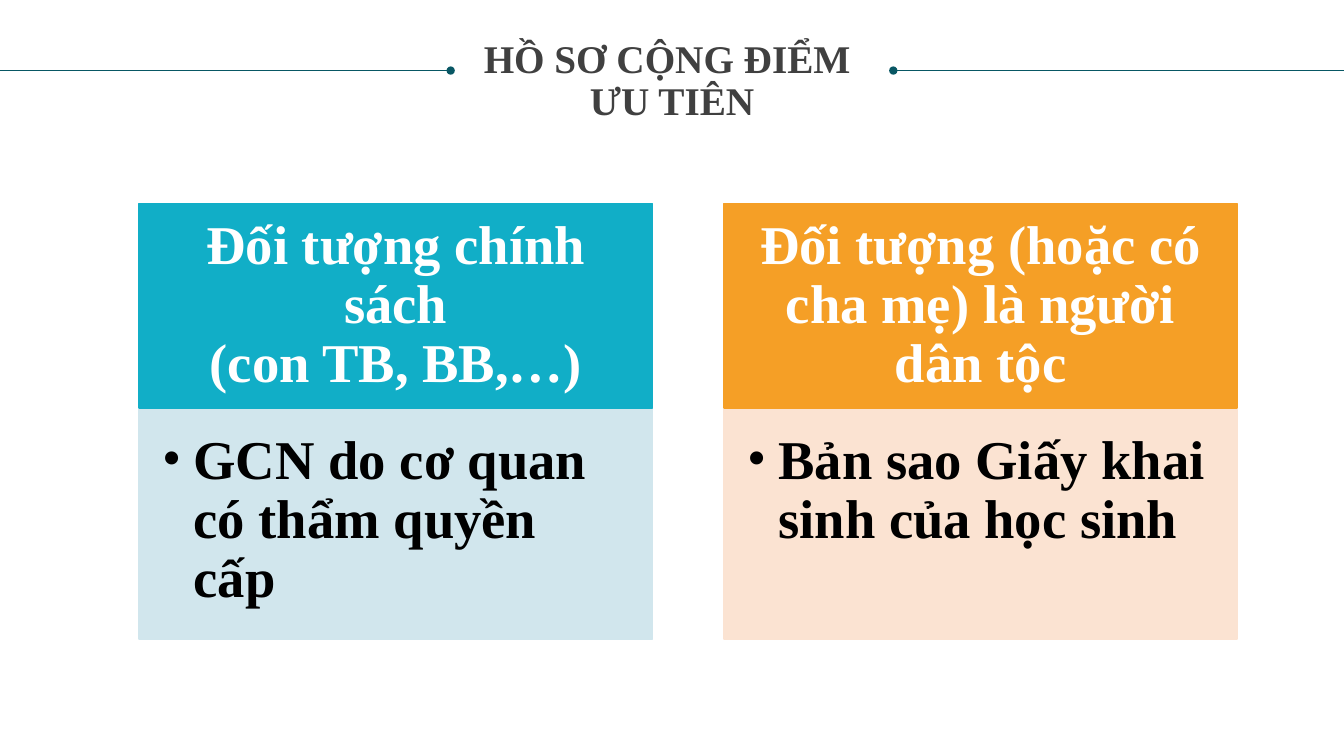
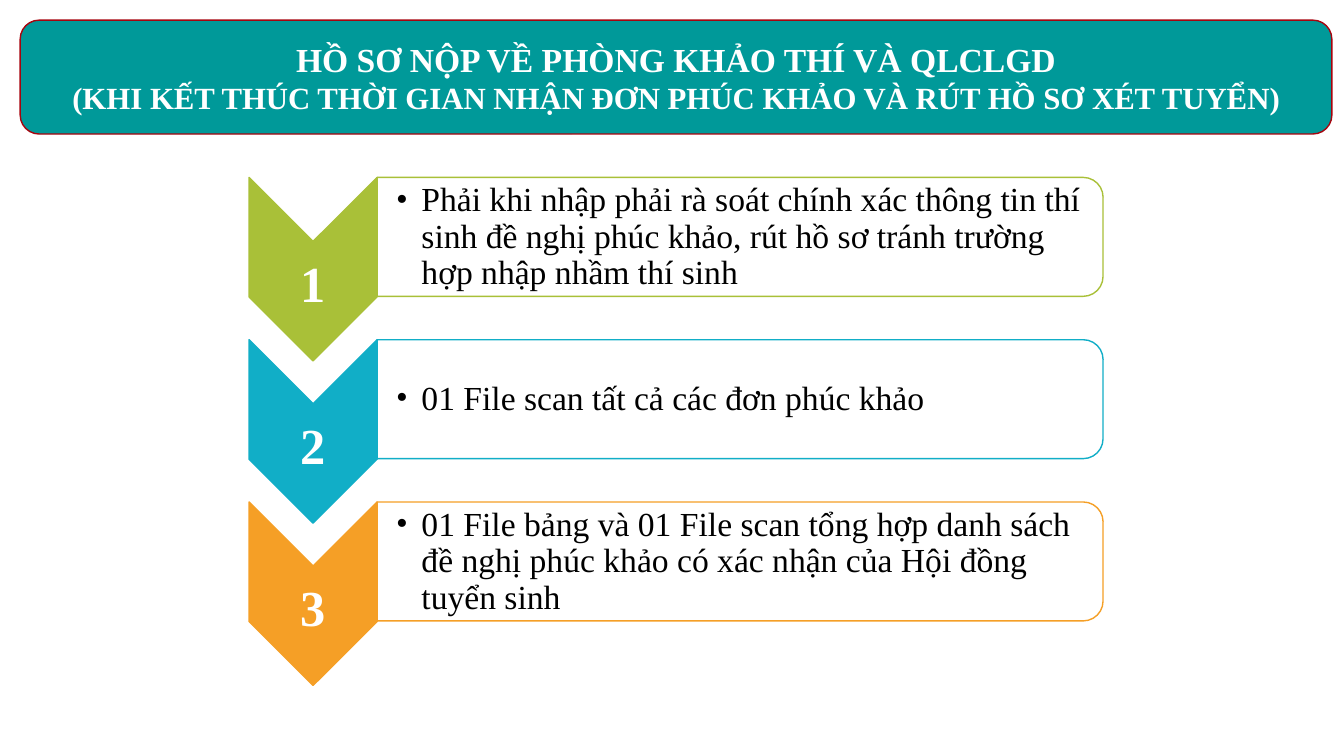
"""Build two slides on priority-point files and on review files."""
from dataclasses import dataclass

from lxml import etree
from pptx import Presentation
from pptx import util as u
from pptx.dml.color import RGBColor
from pptx.enum import shapes, text
from pptx.oxml.ns import qn

FACE = "Times New Roman"
WHITE, BLACK, GREY = "FFFFFF", "000000", "404040"
TEAL, RED, PINE = "009999", "A7040E", "085764"
LIME, BLUE, GOLD = "A9C038", "11AEC7", "F59F26"
SKY, PEACH = "D1E6ED", "FBE3D2"
SIDES = ("left", "top", "width", "height")
KIND = shapes.MSO_SHAPE
MID, TOP = text.MSO_ANCHOR.MIDDLE, text.MSO_ANCHOR.TOP
CENTER, LEFT = text.PP_ALIGN.CENTER, text.PP_ALIGN.LEFT


@dataclass(frozen=True)
class Box:
    """A place on the slide, in inches."""
    left: float
    top: float
    width: float
    height: float


@dataclass(frozen=True)
class Style:
    """The look of a block of text."""
    size: float
    color: str
    bold: bool = True
    align: int = CENTER
    anchor: int = MID
    space: float = 1.0
    inset: tuple = (0, 0, 0, 0)
    hang: float = 0


@dataclass(frozen=True)
class Card:
    """A headed card of the first slide."""
    head: str
    body: str
    dark: str
    light: str


@dataclass(frozen=True)
class Step:
    """A numbered step of the second slide."""
    body: str
    color: str


NAME = Style(28, GREY, anchor=TOP, space=0.9)
BAND = Style(24, WHITE, inset=(0.1, 0.05, 0.1, 0.05))
HEAD = Style(39, WHITE, space=0.9, inset=(0.3, 0.17, 0.3, 0.17))
BODY = Style(39, BLACK, align=LEFT, anchor=TOP, space=0.9,
             inset=(0.23, 0.23, 0.3, 0.34), hang=0.31)
MARK = Style(36, WHITE)
NOTE = Style(24, BLACK, bold=False, align=LEFT, space=0.9,
             inset=(0.19, 0.02, 0.02, 0.02), hang=0.25)

CARDS = (
    Card("Đối tượng chính sách\v(con TB, BB,…)",
         "GCN do cơ quan có thẩm quyền cấp", BLUE, SKY),
    Card("Đối tượng (hoặc có cha mẹ) là người dân tộc",
         "Bản sao Giấy khai sinh của học sinh", GOLD, PEACH),
)
STEPS = (
    Step("Phải khi nhập phải rà soát chính xác thông tin thí sinh đề nghị "
         "phúc khảo, rút hồ sơ tránh trường hợp nhập nhầm thí sinh", LIME),
    Step("01 File scan tất cả các đơn phúc khảo", BLUE),
    Step("01 File bảng và 01 File scan tổng hợp danh sách đề nghị phúc khảo "
         "có xác nhận của Hội đồng tuyển sinh", GOLD),
)


def tint(hue: str) -> RGBColor:
    """Turn a hex string into a colour."""
    return RGBColor.from_string(hue)


def apply(item, values: dict) -> None:
    """Set each named value on an object."""
    for key, value in values.items():
        setattr(item, key, value)


def place(item, box: Box) -> None:
    """Move an object to a box."""
    apply(item, {side: u.Inches(getattr(box, side)) for side in SIDES})


def write(item, style: Style, *lines: str) -> None:
    """Write paragraphs into a shape."""
    frame = item.text_frame
    frame.text = "\n".join(lines)
    apply(frame, {"word_wrap": True, "auto_size": text.MSO_AUTO_SIZE.NONE,
                  "vertical_anchor": style.anchor})
    apply(frame, {f"margin_{side}": u.Inches(gap) for side, gap in
                  zip(("left", "top", "right", "bottom"), style.inset)})
    for para in frame.paragraphs:
        apply(para, {"alignment": style.align, "line_spacing": style.space})
        for run in para.runs:
            apply(run.font, {"name": FACE, "size": u.Pt(style.size),
                             "bold": style.bold})
            run.font.color.rgb = tint(style.color)
        if style.hang:
            prop = para._p.get_or_add_pPr()
            hang = u.Inches(style.hang)
            prop.set("marL", str(hang))
            prop.set("indent", str(-hang))
            etree.SubElement(prop, qn("a:buFont"), typeface=FACE)
            etree.SubElement(prop, qn("a:buChar"), char="•")


def draw(slide, kind: int, box: Box, fill: str, edge: str):
    """Add a filled and outlined shape."""
    item = slide.shapes.add_shape(
        kind, *(u.Inches(getattr(box, side)) for side in SIDES))
    item.shadow.inherit = False
    item.fill.solid()
    item.fill.fore_color.rgb = tint(fill)
    item.line.color.rgb = tint(edge)
    item.line.width = u.Pt(1)
    return item


def turn(slide, kind: int, box: Box, fill: str, edge: str) -> None:
    """Add a shape turned by a quarter that covers the given box."""
    shift = (box.width - box.height) / 2
    flat = Box(box.left + shift, box.top - shift, box.height, box.width)
    draw(slide, kind, flat, fill, edge).rotation = 90


def label(slide, box: Box, style: Style, words: str) -> None:
    """Add a text box."""
    item = slide.shapes.add_textbox(0, 0, 0, 0)
    place(item, box)
    write(item, style, words)


def rule(slide, start: float, end: float) -> None:
    """Add a level title rule with a dot at its start."""
    level = u.Inches(0.7)
    item = slide.shapes.add_connector(
        shapes.MSO_CONNECTOR.STRAIGHT, u.Inches(start), level,
        u.Inches(end), level)
    item.line.color.rgb = tint(PINE)
    item.line.width = u.Pt(0.5)
    etree.SubElement(item.line._get_or_add_ln(), qn("a:headEnd"), type="oval")
    etree.SubElement(item._element.spPr, qn("a:effectLst"))


def begin(deck, box: Box, style: Style, *lines: str):
    """Add a slide with a formatted title."""
    slide = deck.slides.add_slide(deck.slide_layouts[5])
    place(slide.shapes.title, box)
    write(slide.shapes.title, style, *lines)
    return slide


def points(deck) -> None:
    """Build the slide of priority points."""
    slide = begin(deck, Box(0.25, 0.39, 12.83, 1.27), NAME,
                  "HỒ SƠ CỘNG ĐIỂM ", "ƯU TIÊN")
    rule(slide, 4.47, 0)
    rule(slide, 8.86, 13.33)
    for spot, card in enumerate(CARDS):
        left = 1.38 + 5.8 * spot
        head = draw(slide, KIND.RECTANGLE, Box(left, 2.02, 5.09, 2.03),
                    card.dark, card.dark)
        write(head, HEAD, card.head)
        body = draw(slide, KIND.RECTANGLE, Box(left, 4.06, 5.09, 2.28),
                    card.light, card.light)
        write(body, BODY, card.body)


def review(deck) -> None:
    """Build the slide of review steps."""
    area = Box(0.2, 0.2, 13.01, 1.13)
    slide = begin(
        deck, area, BAND, "HỒ SƠ NỘP VỀ PHÒNG KHẢO THÍ VÀ QLCLGD",
        "(KHI KẾT THÚC THỜI GIAN NHẬN ĐƠN PHÚC KHẢO VÀ RÚT HỒ SƠ XÉT TUYỂN)")
    title = slide.shapes.title
    para = title.text_frame.paragraphs[1]
    para.space_before = u.Pt(0)
    para.runs[0].font.size = u.Pt(22)
    band = draw(slide, KIND.ROUNDED_RECTANGLE, area, TEAL, RED)
    title._element.addprevious(band._element)
    for spot, step in enumerate(STEPS):
        top = 1.76 + 1.61 * spot
        turn(slide, KIND.CHEVRON, Box(2.47, top, 1.27, 1.82),
             step.color, step.color)
        label(slide, Box(2.47, top + 0.74, 1.27, 0.6), MARK, str(spot + 1))
        turn(slide, KIND.ROUND_2_SAME_RECTANGLE, Box(3.74, top, 7.2, 1.18),
             WHITE, step.color)
        label(slide, Box(3.74, top + 0.06, 7.14, 1.07), NOTE, step.body)


def main() -> None:
    """Build and save the deck."""
    deck = Presentation()
    apply(deck, {"slide_width": u.Inches(13.33),
                 "slide_height": u.Inches(7.5)})
    points(deck)
    review(deck)
    deck.save("out.pptx")


if __name__ == "__main__":
    main()
